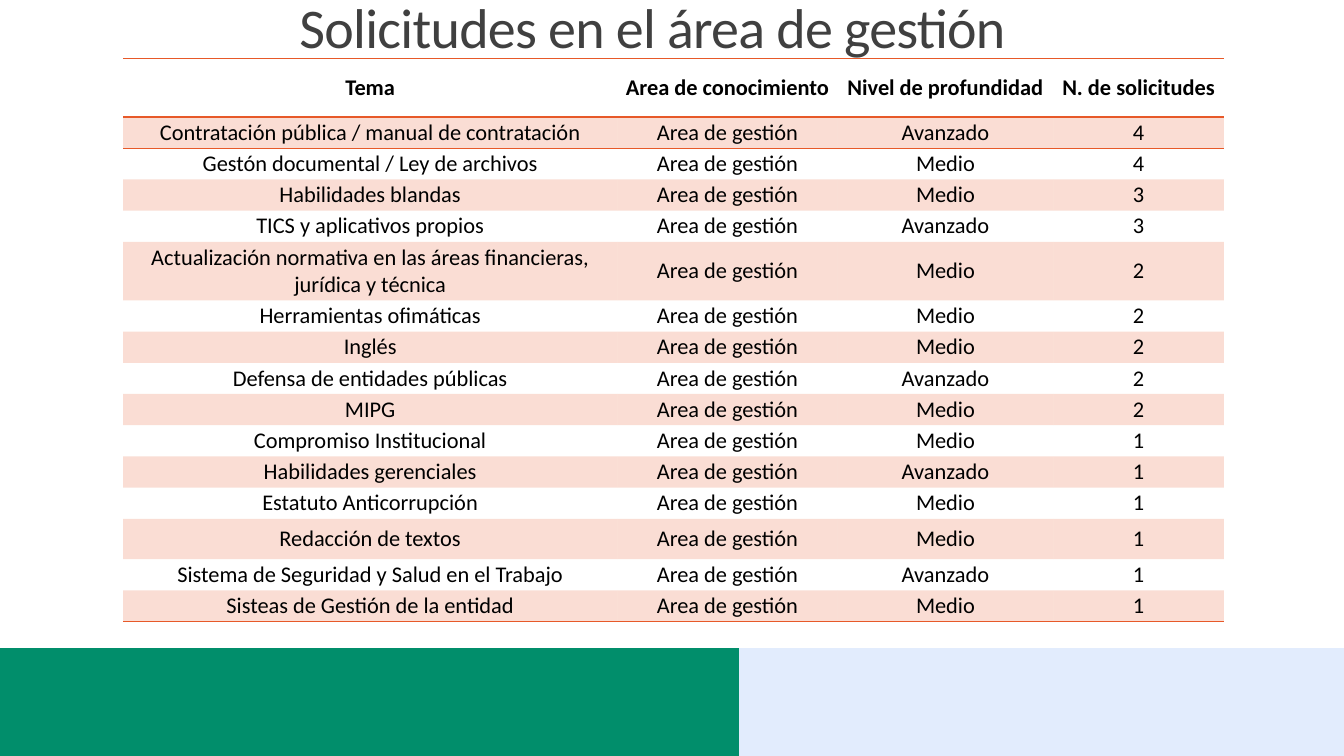
"""Build the slide of training requests in the management area."""
from lxml import etree
from pptx import Presentation, util as u
from pptx.dml.color import RGBColor
from pptx.enum import shapes, text
from pptx.oxml.ns import qn

W, H = 13.33, 7.5
FONT = "Calibri"
COLORS = {"accent": "E75929", "green": "018E6B", "pale": "E2ECFD",
          "title": "404040", "text": "000000"}
NO_STYLE = "{2D5ABB26-0587-4C30-8999-92F81FD0307C}"
AREA = "Area de gestión"
HEADERS = ["Tema", "Area de conocimiento", "Nivel de profundidad", "N. de solicitudes"]
REQUESTS = [
    ("Contratación pública / manual de contratación", "Avanzado", 4),
    ("Gestón documental / Ley de archivos", "Medio", 4),
    ("Habilidades blandas", "Medio", 3),
    ("TICS y aplicativos propios", "Avanzado", 3),
    ("Actualización normativa en las áreas financieras, jurídica y técnica", "Medio", 2),
    ("Herramientas ofimáticas", "Medio", 2),
    ("Inglés", "Medio", 2),
    ("Defensa de entidades públicas", "Avanzado", 2),
    ("MIPG", "Medio", 2),
    ("Compromiso Institucional", "Medio", 1),
    ("Habilidades gerenciales", "Avanzado", 1),
    ("Estatuto Anticorrupción", "Medio", 1),
    ("Redacción de textos", "Medio", 1),
    ("Sistema de Seguridad y Salud en el Trabajo", "Avanzado", 1),
    ("Sisteas de Gestión de la entidad", "Medio", 1),
]
COL_SHARES = [0.449, 0.2, 0.196, 0.155]
ROW_H = 0.31
TALL_ROWS = {0: 0.58, 5: 0.58, 13: 0.4}


def write(tf, content, size, color="text", bold=False, align=text.PP_ALIGN.CENTER):
    """Put one formatted run in a text frame and return it."""
    p = tf.paragraphs[0]
    p.alignment = align
    r = p.add_run()
    r.text = content
    r.font.name, r.font.size, r.font.bold = FONT, u.Pt(size), bold
    r.font.color.rgb = RGBColor.from_string(COLORS[color])
    return r


def add_title(s, x, y, w, h):
    """Move and fill the title placeholder."""
    sp = s.shapes.title
    sp.left, sp.top, sp.width, sp.height = map(u.Inches, (x, y, w, h))
    tf = sp.text_frame
    tf.vertical_anchor = text.MSO_ANCHOR.TOP
    tf.auto_size = text.MSO_AUTO_SIZE.NONE
    r = write(tf, "Solicitudes en el área de gestión", 40, "title",
              align=text.PP_ALIGN.LEFT)
    r.font._element.set("spc", "-50")


def add_footer(s, x, y, w, h):
    """Split the footer box into a green and a pale band."""
    split = 0.55 * w
    for left, width, color in ((x, split, "green"), (x + split, w - split, "pale")):
        sp = s.shapes.add_shape(shapes.MSO_SHAPE.RECTANGLE,
                                *map(u.Inches, (left, y, width, h)))
        sp.shadow.inherit = False
        sp.fill.solid()
        sp.fill.fore_color.rgb = RGBColor.from_string(COLORS[color])
        sp.line.fill.background()


def add_border(cell, side):
    """Draw an accent line on one side of a cell."""
    ln = etree.SubElement(cell._tc.get_or_add_tcPr(), qn(f"a:{side}"),
                          w=str(u.Pt(1)))
    fill = etree.SubElement(ln, qn("a:solidFill"))
    etree.SubElement(fill, qn("a:srgbClr"), val=COLORS["accent"])


def fill_cell(cell, striped):
    """Fill a cell with the translucent accent or leave it clear."""
    if not striped:
        cell.fill.background()
        return
    cell.fill.solid()
    cell.fill.fore_color.rgb = RGBColor.from_string(COLORS["accent"])
    clr = cell._tc.tcPr.find(qn("a:solidFill")).find(qn("a:srgbClr"))
    etree.SubElement(clr, qn("a:alpha"), val="20000")


def add_requests(s, x, y, w):
    """Place the striped table of requests."""
    rows = [HEADERS] + [(topic, AREA, level, str(n)) for topic, level, n in REQUESTS]
    heights = [TALL_ROWS.get(i, ROW_H) for i in range(len(rows))]
    frame = s.shapes.add_table(len(rows), len(HEADERS),
                               *map(u.Inches, (x, y, w, sum(heights))))
    table = frame.table
    table._tbl.tblPr.find(qn("a:tableStyleId")).text = NO_STYLE
    for col, share in zip(table.columns, COL_SHARES):
        col.width = u.Inches(share * w)
    for i, (values, height) in enumerate(zip(rows, heights)):
        table.rows[i].height = u.Inches(height)
        for cell, value in zip(table.rows[i].cells, values):
            cell.margin_left = cell.margin_right = 0
            cell.margin_top = cell.margin_bottom = 0
            cell.vertical_anchor = text.MSO_ANCHOR.MIDDLE
            write(cell.text_frame, value, 16, bold=i == 0)
            if i <= 1:
                add_border(cell, "lnT")
            if i in (0, len(rows) - 1):
                add_border(cell, "lnB")
            fill_cell(cell, striped=i % 2 == 1)


def main():
    """Assemble and save the presentation."""
    prs = Presentation()
    prs.slide_width, prs.slide_height = u.Inches(W), u.Inches(H)
    s = prs.slides.add_slide(prs.slide_layouts[5])
    add_footer(s, 0, 6.43, W, H - 6.43)
    add_requests(s, 1.22, 0.58, 10.92)
    add_title(s, 2.87, -0.12, 9.21, 0.77)
    prs.save("out.pptx")


if __name__ == "__main__":
    main()
